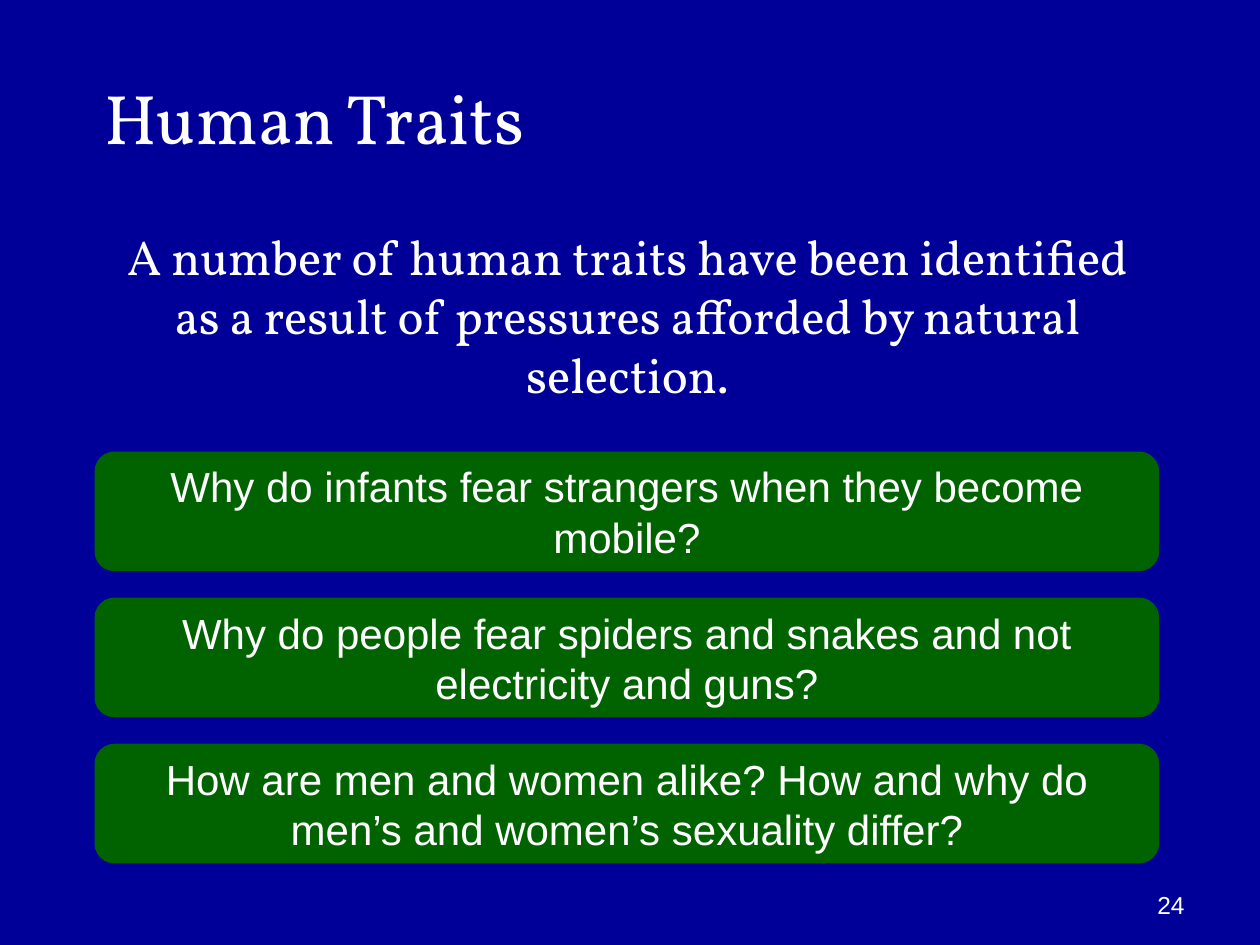
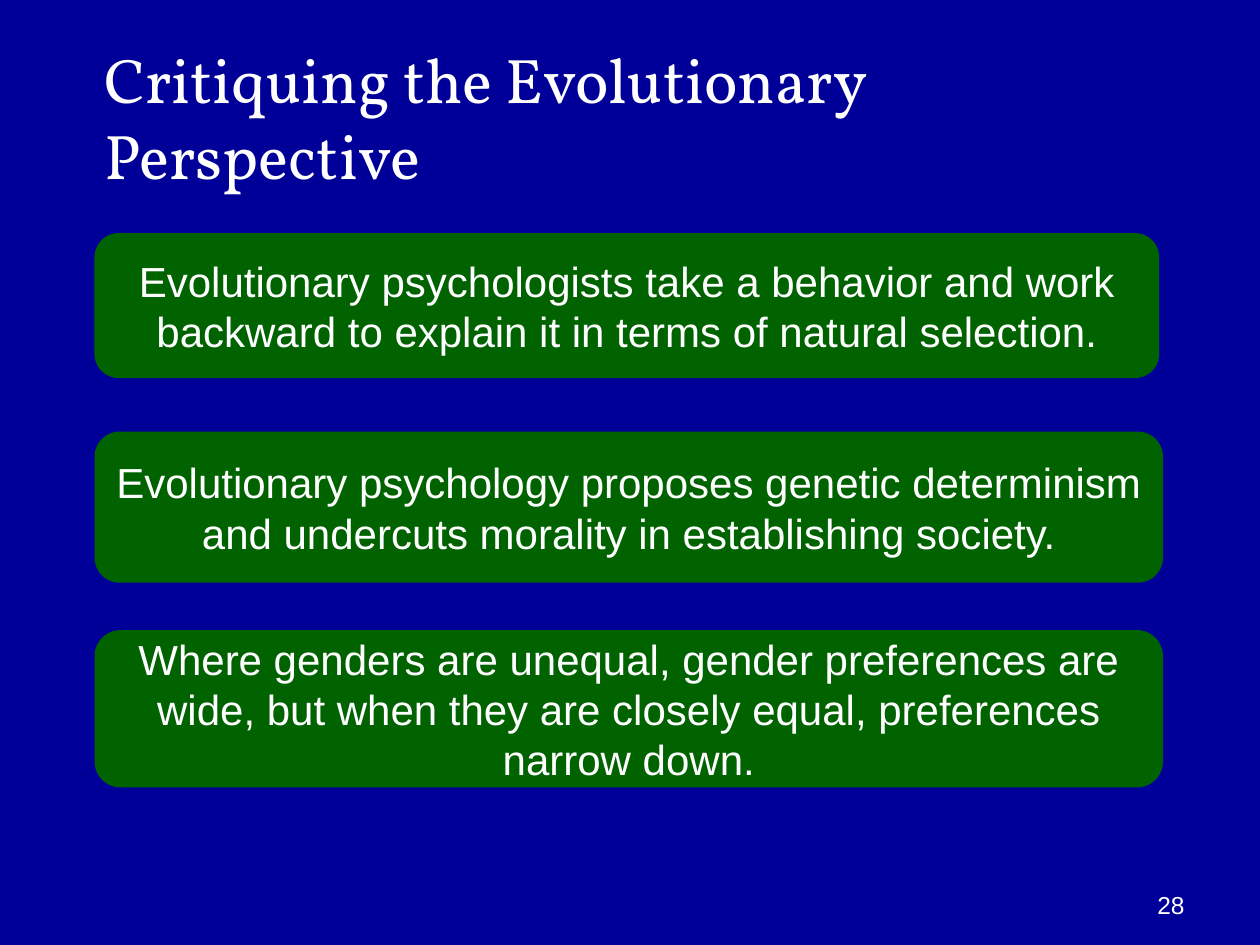
from dataclasses import dataclass
from typing import Any

from pptx import Presentation
from pptx.dml.color import RGBColor
from pptx.enum.shapes import MSO_SHAPE
from pptx.enum.text import MSO_ANCHOR, PP_ALIGN
from pptx.util import Pt

ROUND = MSO_SHAPE.ROUNDED_RECTANGLE
TOP, MIDDLE, BOTTOM = MSO_ANCHOR.TOP, MSO_ANCHOR.MIDDLE, MSO_ANCHOR.BOTTOM
LEFT, CENTER, RIGHT = PP_ALIGN.LEFT, PP_ALIGN.CENTER, PP_ALIGN.RIGHT


@dataclass(frozen=True)
class Theme:
    back: RGBColor = RGBColor(0x00, 0x00, 0x99)
    card: RGBColor = RGBColor(0x00, 0x63, 0x00)
    ink: RGBColor = RGBColor(0xFF, 0xFF, 0xFF)
    serif: str = "Vollkorn"
    sans: str = "Arial"
    title: float = 40
    small: float = 36
    lead: float = 28
    body: float = 24
    number: float = 14


@dataclass(frozen=True)
class Box:
    left: float
    top: float
    width: float
    height: float

    def points(self) -> list[Pt]:
        return [Pt(v) for v in (self.left, self.top, self.width, self.height)]


@dataclass(frozen=True)
class Style:
    face: str
    size: float
    align: Any
    anchor: Any


@dataclass(frozen=True)
class Card:
    text: str
    height: float = 68.4
    width: float = 608.4


@dataclass(frozen=True)
class Page:
    title: str
    size: float
    number: str
    cards: tuple[Card, ...]
    top: float
    pitch: float
    lead: str = ""


THEME = Theme()
EDGE = 54
TITLE = Box(52.56, 21.6, 612, 90)
LEAD = Box(52.56, 126, 612, 108)
NUMBER = Box(516, 492, 168, 37.2)
LEAD_STYLE = Style(THEME.serif, THEME.lead, CENTER, TOP)
CARD_STYLE = Style(THEME.sans, THEME.body, CENTER, MIDDLE)
NUMBER_STYLE = Style(THEME.sans, THEME.number, RIGHT, BOTTOM)

PAGES = (
    Page(
        "Human Traits", THEME.title, "24",
        (
            Card("Why do infants fear strangers when they become mobile?"),
            Card("Why do people fear spiders and snakes and not electricity and guns?"),
            Card("How are men and women alike? How and why do men’s and women’s "
                 "sexuality differ?"),
        ),
        top=258, pitch=83.5,
        lead="A number of human traits have been identified as a result of "
             "pressures afforded by natural selection.",
    ),
    Page(
        "Critiquing the Evolutionary Perspective", THEME.small, "28",
        (
            Card("Evolutionary psychologists take a behavior and work backward to "
                 "explain it in terms of natural selection.", 82.8),
            Card("Evolutionary psychology proposes genetic determinism and "
                 "undercuts morality in establishing society.", 86.4, 610.6),
            Card("Where genders are unequal, gender preferences are wide, but when "
                 "they are closely equal, preferences narrow down.", 90, 610.6),
        ),
        top=133.2, pitch=113.4,
    ),
)


def assign(target: Any, values: dict[str, Any]) -> None:
    for name, value in values.items():
        setattr(target, name, value)


def write(shape: Any, text: str, style: Style) -> None:
    frame = shape.text_frame
    assign(frame, {"word_wrap": True, "vertical_anchor": style.anchor})
    para = frame.paragraphs[0]
    assign(para, {"text": text, "alignment": style.align})
    font = para.runs[0].font
    assign(font, {"name": style.face, "size": Pt(style.size)})
    font.color.rgb = THEME.ink


def add_text(slide: Any, box: Box, text: str, style: Style) -> None:
    write(slide.shapes.add_textbox(*box.points()), text, style)


def add_card(slide: Any, card: Card, top: float) -> None:
    box = Box(EDGE, top, card.width, card.height)
    shape = slide.shapes.add_shape(ROUND, *box.points())
    shape.shadow.inherit = False
    shape.fill.solid()
    shape.fill.fore_color.rgb = THEME.card
    shape.line.fill.background()
    write(shape, card.text, CARD_STYLE)


def add_page(deck: Any, page: Page) -> None:
    slide = deck.slides.add_slide(deck.slide_layouts[6])
    fill = slide.background.fill
    fill.solid()
    fill.fore_color.rgb = THEME.back
    add_text(slide, NUMBER, page.number, NUMBER_STYLE)
    add_text(slide, TITLE, page.title, Style(THEME.serif, page.size, LEFT, MIDDLE))
    if page.lead:
        add_text(slide, LEAD, page.lead, LEAD_STYLE)
    for index, card in enumerate(page.cards):
        add_card(slide, card, page.top + index * page.pitch)


def main() -> None:
    deck = Presentation()
    assign(deck, {"slide_width": Pt(720), "slide_height": Pt(540)})
    for page in PAGES:
        add_page(deck, page)
    deck.save("out.pptx")


if __name__ == "__main__":
    main()
